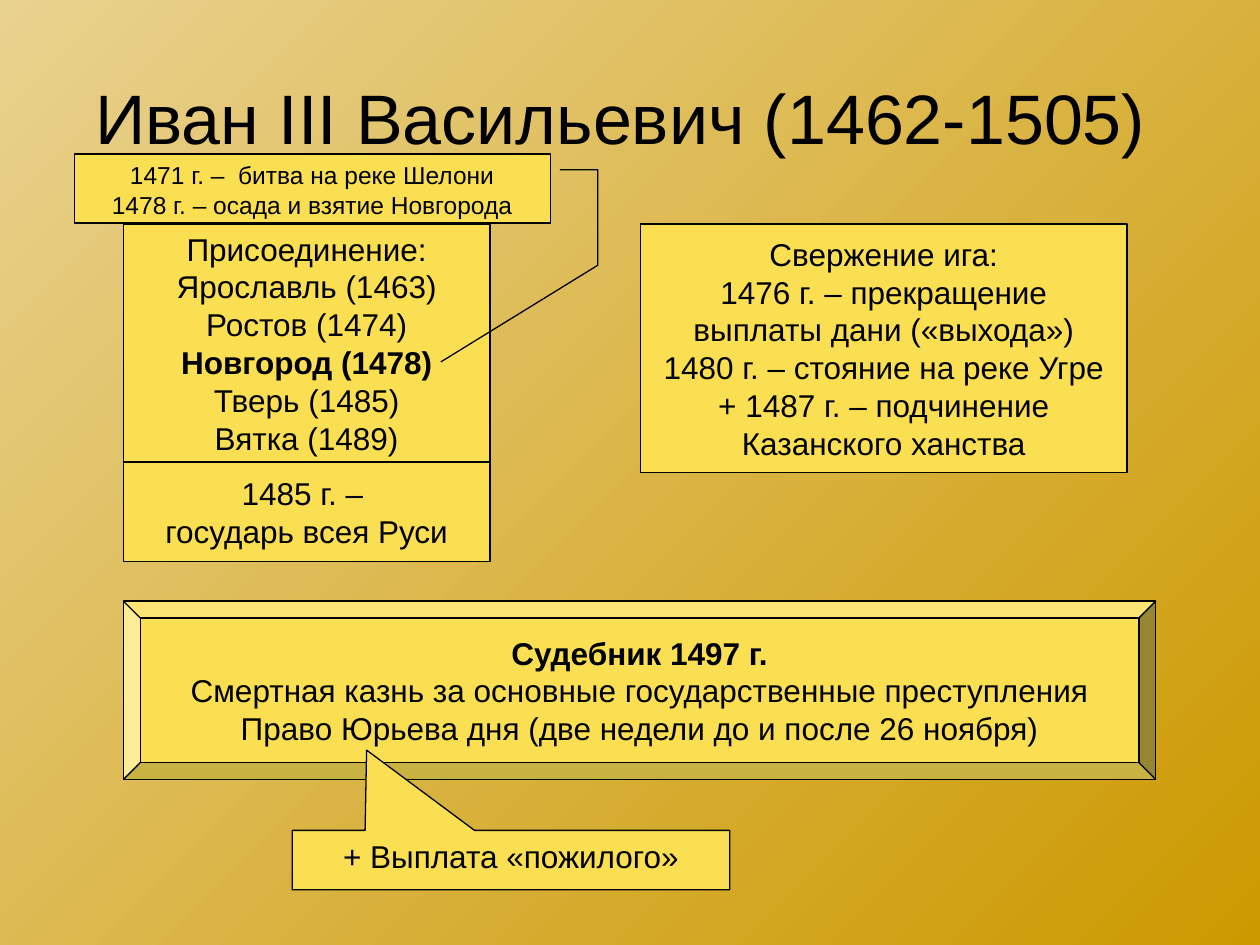
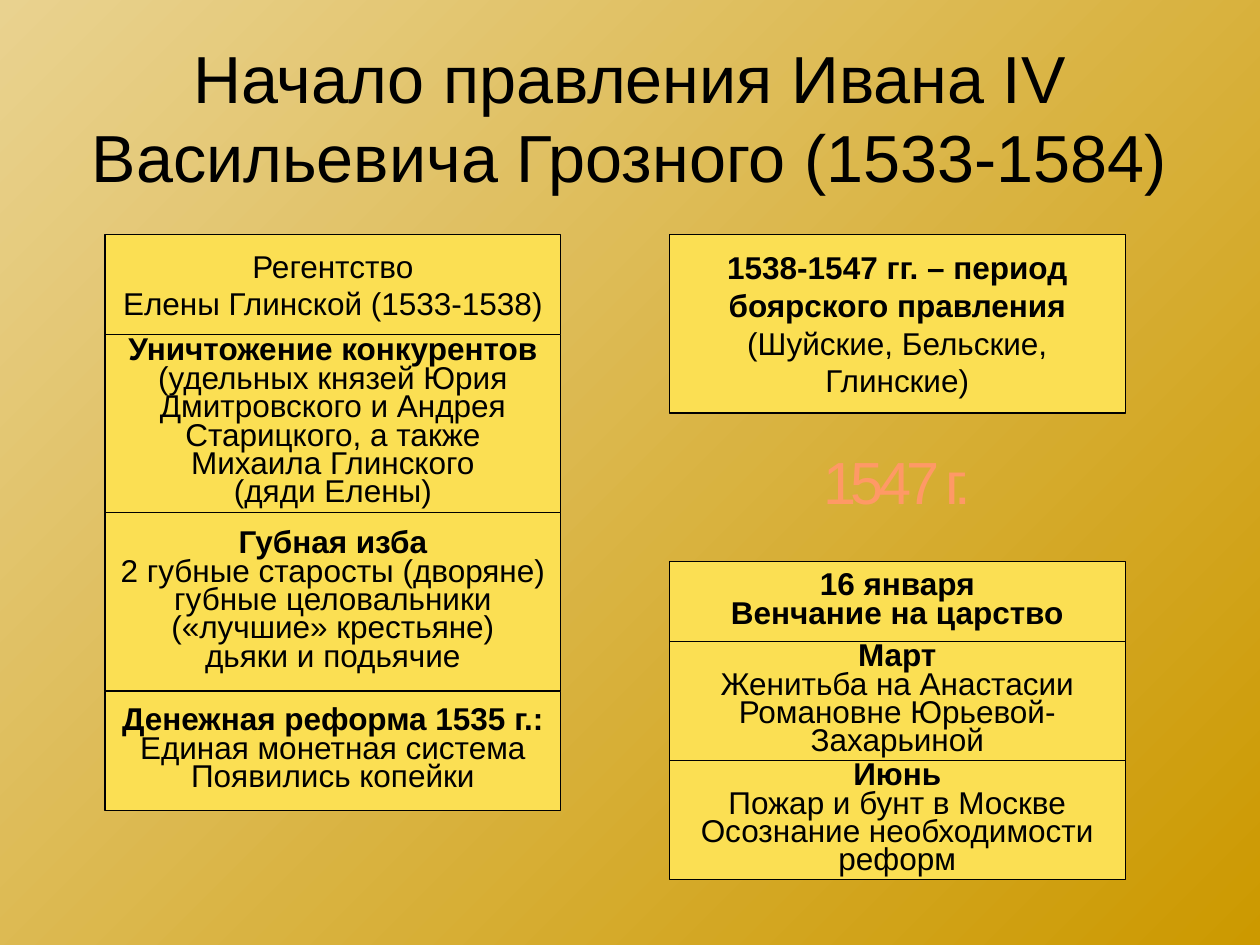
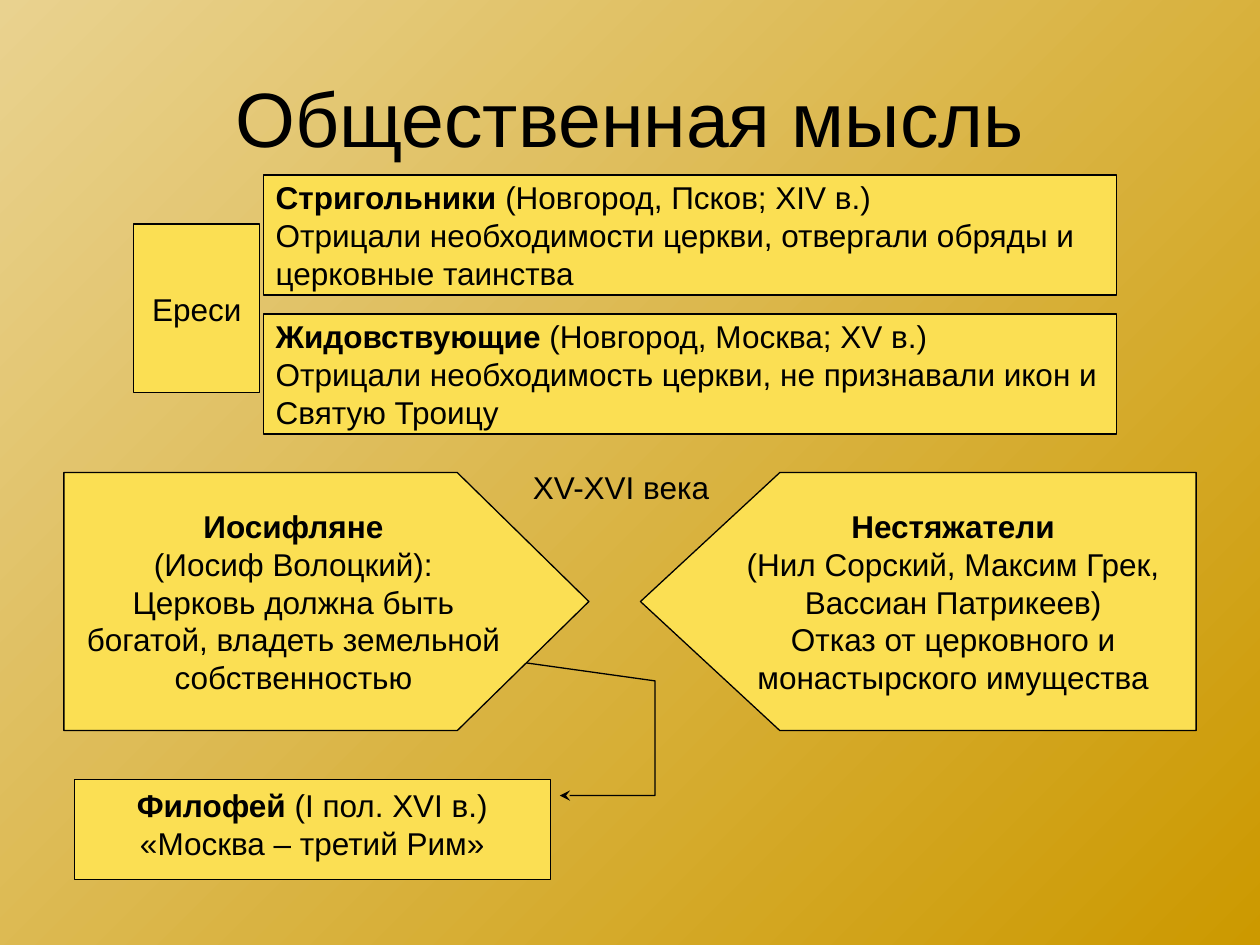
from lxml import etree
from pptx import Presentation
from pptx import util as u
from pptx.dml import color
from pptx.enum import shapes, text
from pptx.oxml import ns

FONT = "Arial"
INK = "000000"
PANEL = "FBDF53"
ACCENT = "FF9966"
BACKDROP = ("E9D28F", "CC9900")
KIND = shapes.MSO_SHAPE
ALIGN = text.PP_ALIGN
ANCHOR = text.MSO_ANCHOR


def rgb(code):
    return color.RGBColor.from_string(code)


def points(lengths):
    return [u.Pt(length) for length in lengths]


def write(frame, wording, size=18, ink=INK, align=ALIGN.CENTER,
          anchor=ANCHOR.MIDDLE, wrap=False, spacing=None, tracking=None):
    """Fill a frame; newlines split paragraphs and ** pairs mark bold."""
    frame.word_wrap = wrap
    frame.vertical_anchor = anchor
    for index, line in enumerate(wording.split("\n")):
        paragraph = frame.paragraphs[0] if index == 0 else frame.add_paragraph()
        paragraph.alignment = align
        if spacing:
            paragraph.line_spacing = spacing
        for part, words in enumerate(line.split("**")):
            if words:
                run = paragraph.add_run()
                run.text = words
                run.font.name = FONT
                run.font.size = u.Pt(size)
                run.font.bold = part % 2 == 1
                run.font.color.rgb = rgb(ink)
                if tracking:
                    run._r.get_or_add_rPr().set("spc", str(tracking * 100))


def label(slide, area, wording, **style):
    caption = slide.shapes.add_textbox(*points(area))
    write(caption.text_frame, wording, **style)


def panel(slide, area, wording, kind=KIND.RECTANGLE, adjust=(), flip=False, **style):
    block = slide.shapes.add_shape(kind, *points(area))
    block.shadow.inherit = False
    block.fill.solid()
    block.fill.fore_color.rgb = rgb(PANEL)
    block.line.color.rgb = rgb(INK)
    block.line.width = u.Pt(0.75)
    for index, value in enumerate(adjust):
        block.adjustments[index] = value
    if flip:
        block.element.spPr.xfrm.set("flipH", "1")
    write(block.text_frame, wording, **style)
    return block


def callout(slide, area, wording, kind=KIND.LINE_CALLOUT_3, **style):
    return panel(slide, area, wording, kind, anchor=ANCHOR.TOP, wrap=True, **style)


def stack(slide, left, top, width, rows):
    for height, spacing, wording in rows:
        panel(slide, (left, top, width, height), wording, spacing=spacing)
        top += height


def titled_slide(deck, title, size):
    slide = deck.slides.add_slide(deck.slide_layouts[6])
    fill = slide.background.fill
    fill.gradient()
    fill.gradient_angle = 315
    for stop, shade, position in zip(fill.gradient_stops, BACKDROP, (0, 1)):
        stop.color.rgb = rgb(shade)
        stop.position = position
    label(slide, (36, 21.5, 648, 90), title, size=size, wrap=True)
    return slide


def ivan_third(deck):
    slide = titled_slide(deck, "Иван III Васильевич (1462-1505) ", 40)
    panel(slide, (70.5, 128, 209.5, 136),
          "Присоединение:\nЯрославль (1463)\nРостов (1474)\n"
          "**Новгород (1478)**\nТверь (1485)\nВятка (1489)")
    panel(slide, (366, 128, 278, 142),
          "Свержение ига:\n1476 г. – прекращение\nвыплаты дани («выхода»)\n"
          "1480 г. – стояние на реке Угре\n+ 1487 г. – подчинение\nКазанского ханства")
    callout(slide, (42.5, 88, 272, 39.5),
            "1471 г. –  битва на реке Шелони\n1478 г. – осада и взятие Новгорода",
            adjust=(0.23, -0.02, 0.23, -0.1, 1.61, -0.1, 3.01, 0.23),
            flip=True, size=14)
    panel(slide, (70.5, 264, 209.5, 57), "1485 г. – \nгосударь всея Руси")
    panel(slide, (70.5, 343.5, 590, 102),
          "**Судебник 1497 г.**\n"
          "Смертная казнь за основные государственные преступления\n"
          "Право Юрьева дня (две недели до и после 26 ноября)",
          KIND.BEVEL, adjust=(0.095,))
    callout(slide, (167, 474.5, 250, 34), "+ Выплата «пожилого»",
            KIND.RECTANGULAR_CALLOUT, adjust=(-0.33, -1.85))


def ivan_fourth(deck):
    slide = titled_slide(
        deck, "Начало правления Ивана IV Васильевича Грозного (1533-1584)", 38)
    regency_left, boyars_left, top, width = 60, 382.5, 134, 260.5
    tight = 0.75
    stack(slide, regency_left, top, width, [
        (57, None, "Регентство\nЕлены Глинской (1533-1538)"),
        (102, tight, "**Уничтожение конкурентов**\n(удельных князей Юрия\n"
                     "Дмитровского и Андрея\nСтарицкого, а также\n"
                     "Михаила Глинского\n(дяди Елены)"),
        (102, tight, "**Губная изба**\n2 губные старосты (дворяне)\n"
                     "губные целовальники\n(«лучшие» крестьяне)\nдьяки и подьячие"),
        (68, tight, "**Денежная реформа 1535 г.:**\nЕдиная монетная система\n"
                    "Появились копейки"),
    ])
    panel(slide, (boyars_left, top, width, 102),
          "**1538-1547 гг. – период**\n**боярского правления**\n"
          "(Шуйские, Бельские,\nГлинские)")
    label(slide, (boyars_left, 250, width, 50), "1547 г.",
          size=34, ink=ACCENT, wrap=True, tracking=-3)
    stack(slide, boyars_left, 321, width, [
        (45.5, tight, "**16 января**\n**Венчание на царство**"),
        (68, tight, "**Март**\nЖенитьба на Анастасии\nРомановне Юрьевой-\nЗахарьиной"),
        (68, tight, "**Июнь**\nПожар и бунт в Москве\n"
                    "Осознание необходимости\nреформ"),
    ])


def public_thought(deck):
    slide = titled_slide(deck, "Общественная мысль", 44)
    panel(slide, (76.5, 128, 72, 96.5), "Ереси")
    heresies = (
        "**Стригольники** (Новгород, Псков; XIV в.)\n"
        "Отрицали необходимости церкви, отвергали обряды и\nцерковные таинства",
        "**Жидовствующие** (Новгород, Москва; XV в.)\n"
        "Отрицали необходимость церкви, не признавали икон и\nСвятую Троицу",
    )
    for index, heresy in enumerate(heresies):
        panel(slide, (150.5, 100 + 79.5 * index, 487.5, 68.5), heresy, align=ALIGN.LEFT)
    panel(slide, (36.5, 270, 300, 147.5),
          "**Иосифляне**\n(Иосиф Волоцкий):\nЦерковь должна быть\n"
          "богатой, владеть земельной\nсобственностью",
          KIND.PENTAGON, adjust=(0.51,))
    panel(slide, (366, 270, 317.5, 147.5),
          "**Нестяжатели**\n(Нил Сорский, Максим Грек,\nВассиан Патрикеев)\n"
          "Отказ от церковного и\nмонастырского имущества",
          KIND.PENTAGON, adjust=(0.54,), flip=True)
    label(slide, (297.5, 264, 116, 29), "XV-XVI века",
          align=ALIGN.LEFT, anchor=ANCHOR.TOP)
    philotheus = callout(slide, (42.5, 445.5, 272, 57),
                         "**Филофей** (I пол. XVI в.)\n«Москва – третий Рим»",
                         adjust=(0.16, 1.02, 0.16, 1.22, -0.99, 1.22, -1.17, 0.95))
    etree.SubElement(philotheus.line._get_or_add_ln(), ns.qn("a:headEnd"), type="stealth")


def main():
    deck = Presentation()
    deck.slide_width, deck.slide_height = points((720, 540))
    ivan_third(deck)
    ivan_fourth(deck)
    public_thought(deck)
    deck.save("out.pptx")


if __name__ == "__main__":
    main()
